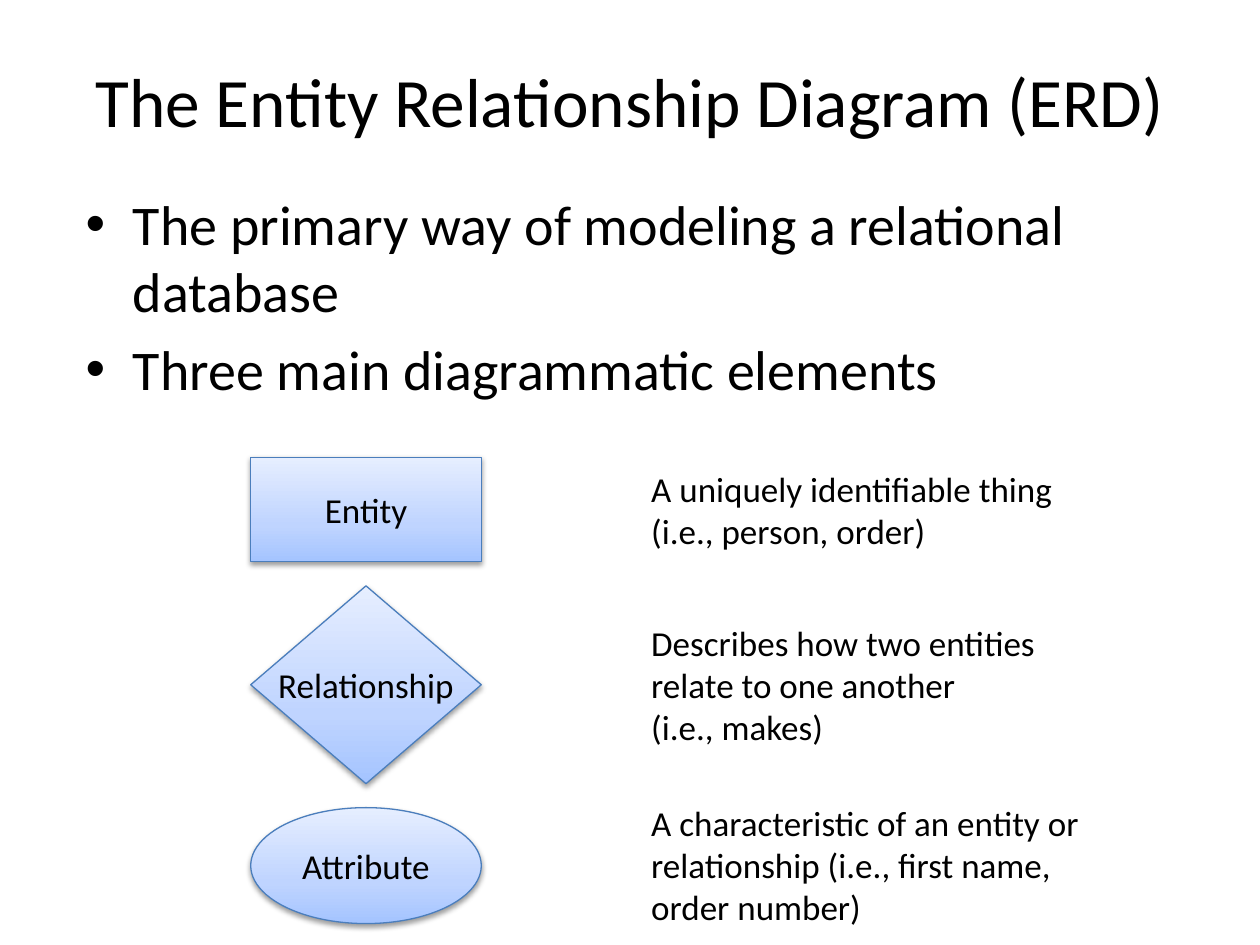
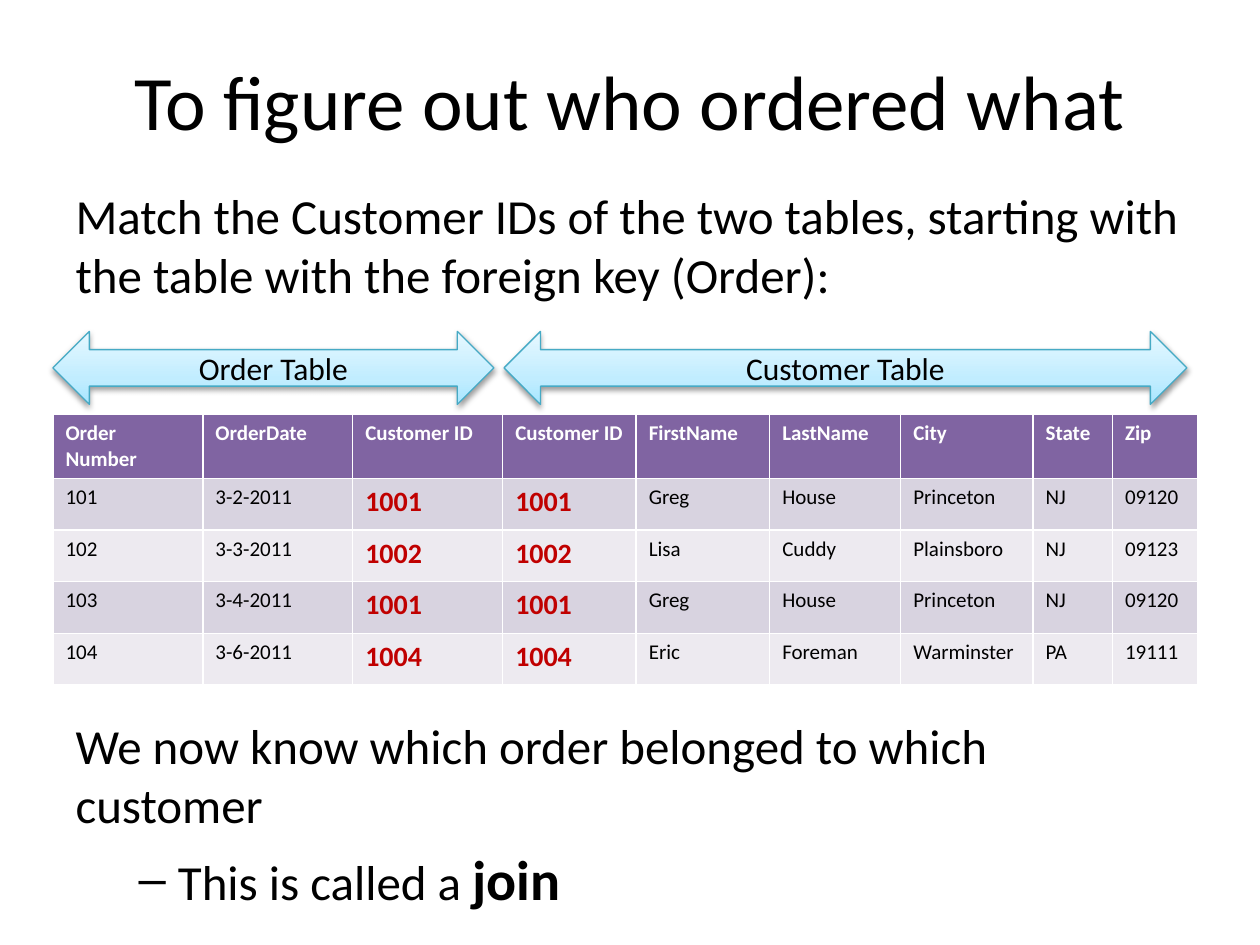
from collections import namedtuple
from pptx import Presentation
from pptx.dml.color import RGBColor
from pptx.enum.shapes import MSO_SHAPE
from pptx.enum.text import MSO_ANCHOR, MSO_AUTO_SIZE, PP_ALIGN
from pptx.oxml import parse_xml
from pptx.oxml.ns import nsdecls
from pptx.util import Inches, Pt

# Shared look
FONT = "Calibri"
BLACK = RGBColor(0x00, 0x00, 0x00)
WHITE = RGBColor(0xFF, 0xFF, 0xFF)
RED = RGBColor(0xC0, 0x00, 0x00)
PURPLE = RGBColor(0x80, 0x64, 0xA2)
BANDS = (RGBColor(0xD8, 0xD3, 0xE0), RGBColor(0xED, 0xEA, 0xF0))

# Gradient from bottom to top, then the outline
Tint = namedtuple("Tint", "low mid high line")
BLUE = Tint(RGBColor(0xA4, 0xC4, 0xFF), RGBColor(0xBF, 0xD4, 0xFF),
            RGBColor(0xE6, 0xEE, 0xFF), RGBColor(0x4B, 0x7E, 0xBC))
AQUA = Tint(RGBColor(0xA7, 0xE6, 0xFF), RGBColor(0xC1, 0xED, 0xFF),
            RGBColor(0xE7, 0xF8, 0xFF), RGBColor(0x46, 0xAA, 0xC5))

# Grid of 100 columns by 75 rows
CELL = Inches(0.1)
Box = namedtuple("Box", "x y w h")
TITLE = Box(5, 1.7, 90, 12.5)


def units(*sizes):
    return [int(size * CELL) for size in sizes]


def place(shape, box):
    shape.left, shape.top, shape.width, shape.height = units(*box)


def style(para, size, color=BLACK, bold=None):
    font = para.font
    font.name, font.size, font.bold = FONT, Pt(size), bold
    font.color.rgb = color


def start(deck, title, size, box):
    """Add a slide with its title; return it with its empty body frame."""
    slide = deck.slides.add_slide(deck.slide_layouts[1])
    head, body = slide.placeholders
    place(head, TITLE)
    place(body, box)
    for holder in (head, body):
        holder.text_frame.auto_size = MSO_AUTO_SIZE.NONE
    head.text_frame.text = title
    style(head.text_frame.paragraphs[0], size)
    return slide, body.text_frame


def glossy(slide, kind, box, text, size, tint):
    """Add a labelled shape with a gradient and a soft shadow."""
    shape = slide.shapes.add_shape(kind, *units(*box))
    shape.line.color.rgb = tint.line
    shape.line.width = Pt(0.75)
    stops = "".join(
        f'<a:gs pos="{pos}"><a:srgbClr val="{color}"/></a:gs>'
        for pos, color in zip((0, 35000, 100000), tint))
    fill = parse_xml(
        f'<a:gradFill {nsdecls("a")} rotWithShape="1"><a:gsLst>{stops}</a:gsLst>'
        '<a:lin ang="16200000" scaled="0"/></a:gradFill>')
    shadow = parse_xml(
        f'<a:effectLst {nsdecls("a")}><a:outerShdw blurRad="40000" dist="20000" '
        'dir="5400000" rotWithShape="0"><a:srgbClr val="000000">'
        '<a:alpha val="38000"/></a:srgbClr></a:outerShdw></a:effectLst>')
    line = shape.line._get_or_add_ln()
    line.addprevious(fill)
    line.addnext(shadow)
    frame = shape.text_frame
    frame.vertical_anchor = MSO_ANCHOR.MIDDLE
    frame.word_wrap = kind != MSO_SHAPE.DIAMOND
    frame.text = text
    frame.paragraphs[0].alignment = PP_ALIGN.CENTER
    style(frame.paragraphs[0], size)


def note(slide, box, text):
    frame = slide.shapes.add_textbox(*units(*box)).text_frame
    frame.word_wrap = True
    frame.text = text
    style(frame.paragraphs[0], 20)


def legend(slide, box, items):
    """Stack the symbols, each with its meaning centred beside it."""
    gap = (box.h - sum(item[2] for item in items)) / (len(items) - 1)
    wide, shift = 18.3, 30.8
    top = box.y
    for kind, name, high, lines, text in items:
        glossy(slide, kind, Box(box.x, top, wide, high), name, 20, BLUE)
        tall = 0.9 + 3.4 * lines
        note(slide, Box(box.x + shift, top + (high - tall) / 2,
                        box.w - shift, tall), text)
        top += high + gap


def grid(slide, box, widths, rows, keys):
    """Add the banded table; the key columns stand out in red."""
    table = slide.shapes.add_table(len(rows), len(widths), *units(*box)).table
    for col, width in zip(table.columns, widths):
        col.width = units(width)[0]
    for r, row in enumerate(rows):
        table.rows[r].height = units(box.h / len(rows))[0]
        for c, text in enumerate(row):
            cell = table.cell(r, c)
            cell.text = text
            cell.fill.solid()
            cell.fill.fore_color.rgb = BANDS[(r - 1) % 2] if r else PURPLE
            para = cell.text_frame.paragraphs[0]
            if r == 0:
                style(para, 12, WHITE, True)
            elif c in keys:
                style(para, 16, RED, True)
            else:
                style(para, 12, BLACK, False)


def diagram(deck):
    slide, body = start(deck, "The Entity Relationship Diagram (ERD)", 39.6,
                        Box(5.8, 14.5, 80.8, 49.5))
    body.text = ("The primary way of modeling a relational database\n"
                 "Three main diagrammatic elements")
    for para in body.paragraphs:
        style(para, 32)
    # Kind, name, height, lines of meaning, meaning
    legend(slide, Box(19.9, 36.3, 69.1, 37), [
        (MSO_SHAPE.RECTANGLE, "Entity", 8.3, 2,
         "A uniquely identifiable thing (i.e., person, order)"),
        (MSO_SHAPE.DIAMOND, "Relationship", 15.7, 3,
         "Describes how two entities relate to one another\v(i.e., makes)"),
        (MSO_SHAPE.OVAL, "Attribute", 9.2, 3,
         "A characteristic of an entity or relationship "
         "(i.e., first name, order number)"),
    ])


def joined(slide, box):
    """Place the table with an arrow over each of its sources."""
    orders = [("101", "3-2-2011", "1001"), ("102", "3-3-2011", "1002"),
              ("103", "3-4-2011", "1001"), ("104", "3-6-2011", "1004")]
    people = {"1001": ("Greg", "House", "Princeton", "NJ", "09120"),
              "1002": ("Lisa", "Cuddy", "Plainsboro", "NJ", "09123"),
              "1004": ("Eric", "Foreman", "Warminster", "PA", "19111")}
    rows = [("Order Number", "OrderDate", "Customer ID", "Customer ID",
             "FirstName", "LastName", "City", "State", "Zip")]
    rows += [(*order, order[2], *people[order[2]]) for order in orders]
    widths = [11.9] * 3 + [10.6] * 2 + [10.4, 10.5, 6.3, 6.8]
    grid(slide, Box(box.x, box.y + 6.6, box.w, box.h - 6.6), widths, rows, (2, 3))
    for name, left, wide in (("Order Table", 0, 35), ("Customer Table", 35.8, 54.2)):
        glossy(slide, MSO_SHAPE.LEFT_RIGHT_ARROW,
               Box(box.x + left, box.y, wide, 5.8), name, 18, AQUA)


def match(deck):
    slide, body = start(deck, "To figure out who ordered what", 44,
                        Box(5, 14.2, 90, 57.5))
    body.text = ("Match the Customer IDs of the two tables, starting with "
                 "the table with the foreign key (Order):\n"
                 "We now know which order belonged to which customer\n"
                 "This is called a ")
    intro, result, term = body.paragraphs
    for para in body.paragraphs:
        style(para, 28)
    # Plain paragraphs without bullets
    for para in (intro, result):
        props = para._p.get_or_add_pPr()
        props.set("marL", "0")
        props.set("indent", "0")
        props.insert(0, parse_xml(f'<a:buNone {nsdecls("a")}/>'))
    # Leave room for the table
    result.space_before = Pt(236)
    term.level = 1
    word = term.add_run()
    word.text = "join"
    word.font.size, word.font.bold = Pt(32), True
    joined(slide, Box(4.2, 26.3, 90.8, 27.1))


def main():
    deck = Presentation()
    deck.slide_width, deck.slide_height = units(100, 75)
    diagram(deck)
    match(deck)
    deck.save("out.pptx")


if __name__ == "__main__":
    main()
